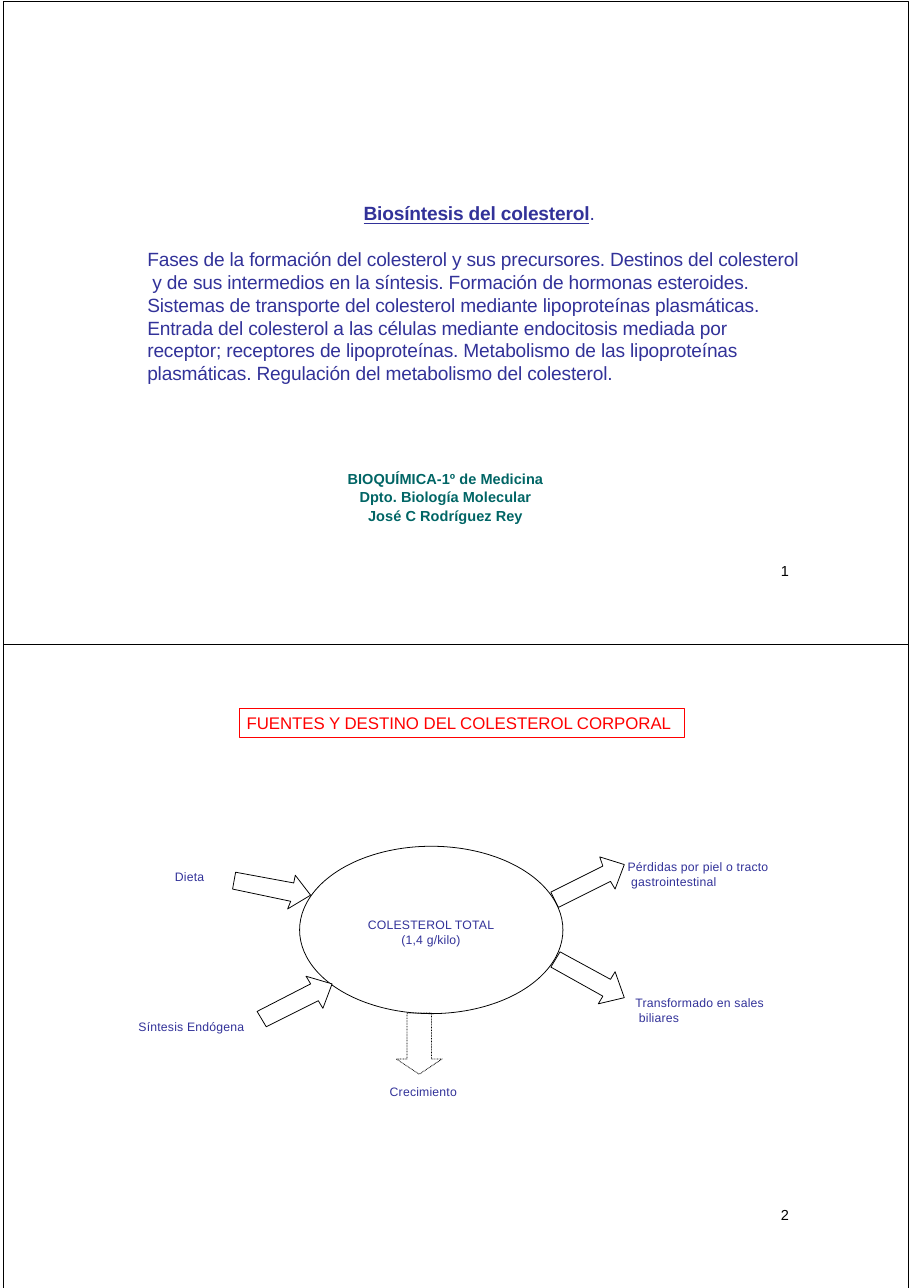
from pptx import Presentation
from pptx.dml.color import RGBColor
from pptx.enum.dml import MSO_LINE
from pptx.enum.shapes import MSO_SHAPE
from pptx.enum.text import MSO_ANCHOR, PP_ALIGN
from pptx.util import Pt
from math import hypot

BLACK, WHITE, RED, BLUE, GREEN = "000000", "FFFFFF", "FF0000", "323299", "006565"


def rgb(value):
    return RGBColor.from_string(value)


def style_shape(sp, line, width, fill=None):
    sp.shadow.inherit = False
    if fill:
        sp.fill.solid()
        sp.fill.fore_color.rgb = rgb(fill)
    else:
        sp.fill.background()
    sp.line.color.rgb = rgb(line)
    sp.line.width = Pt(width)


def add_outline(s, kind, box, line=BLACK, width=0.52):
    sp = s.shapes.add_shape(kind, *map(Pt, box))
    style_shape(sp, line, width)
    return sp


def format_run(r, size, color, bold, spacing):
    r.font.name = "Arial"
    r.font.size = Pt(size)
    r.font.bold = bold
    r.font.color.rgb = rgb(color)
    r._r.get_or_add_rPr().set("spc", str(spacing))


def fill_text(sp, lines, size, color, align=PP_ALIGN.LEFT, bold=False,
              spacing=10, leading=None, left=0.5, top=2.5):
    tf = sp.text_frame
    tf.word_wrap = True
    tf.vertical_anchor = MSO_ANCHOR.TOP
    tf.margin_left, tf.margin_top = Pt(left), Pt(top)
    tf.margin_right = tf.margin_bottom = 0
    tf.text = "\n".join(lines)
    for p in tf.paragraphs:
        p.alignment = align
        if leading:
            p.line_spacing = Pt(leading)
        for r in p.runs:
            format_run(r, size, color, bold, spacing)
    return tf


def add_text(s, box, lines, size, color, **options):
    return fill_text(s.shapes.add_textbox(*map(Pt, box)), lines, size, color, **options)


def add_block_arrow(s, tail, tip, shaft=11.6, head=12.6, fill=None):
    length = hypot(tip[0] - tail[0], tip[1] - tail[1])
    ux, uy = (tip[0] - tail[0]) / length, (tip[1] - tail[1]) / length
    neck = length - head
    outline = [(0, -shaft / 2), (neck, -shaft / 2), (neck, -shaft), (length, 0),
               (neck, shaft), (neck, shaft / 2), (0, shaft / 2)]
    points = [(tail[0] + a * ux - b * uy, tail[1] + a * uy + b * ux) for a, b in outline]
    builder = s.shapes.build_freeform(*points[0], scale=Pt(1))
    builder.add_line_segments(points[1:], close=True)
    sp = builder.convert_to_shape()
    style_shape(sp, BLACK, 0.52, fill)
    return sp


def add_syllabus(s):
    tf = add_text(s, (95.8, 131, 434.2, 123), [
        "Biosíntesis del colesterol",
        "Fases de la formación del colesterol y sus precursores. Destinos del colesterol"
        "\v y de sus intermedios en la síntesis. Formación de hormonas esteroides."
        "\vSistemas de transporte del colesterol mediante lipoproteínas plasmáticas."
        "\vEntrada del colesterol a las células mediante endocitosis mediada por"
        "\vreceptor; receptores de lipoproteínas. Metabolismo de las lipoproteínas"
        "\vplasmáticas. Regulación del metabolismo del colesterol.",
    ], 12.5, BLUE, spacing=-10, leading=14.9, top=1)
    title, body = tf.paragraphs
    title.alignment = PP_ALIGN.CENTER
    title.runs[0].font.bold = title.runs[0].font.underline = True
    r = title.add_run()
    r.text = "."
    format_run(r, 12.5, BLUE, False, -10)
    body.space_before = Pt(15)


def add_cholesterol_flow(s):
    heading = add_outline(s, MSO_SHAPE.RECTANGLE, (156.2, 463, 290.9, 18.7), RED)
    tf = fill_text(heading, ["FUENTES Y DESTINO DEL COLESTEROL CORPORAL"], 11, RED,
                   spacing=-5, left=5, top=0)
    tf.vertical_anchor = MSO_ANCHOR.MIDDLE

    add_outline(s, MSO_SHAPE.OVAL, (195.8, 553, 172.1, 109.4))
    add_text(s, (238.3, 596.9, 86.4, 21.6), ["COLESTEROL TOTAL", "(1,4 g/kilo)"],
             8, BLUE, align=PP_ALIGN.CENTER, leading=9.8)

    add_block_arrow(s, (153, 575.3), (203, 585.4))
    for tail, tip in [((171, 666), (216.7, 643)),
                      ((363.2, 626.8), (407.5, 651.6)),
                      ((362.5, 587.9), (408.2, 565.2))]:
        add_block_arrow(s, tail, tip, fill=WHITE)
    growth = add_block_arrow(s, (274, 662.4), (274, 702), shaft=15.3, head=10)
    growth.line.dash_style = MSO_LINE.ROUND_DOT

    for x, y, width, label in [
        (113.8, 565.9, 21.6, "Dieta"),
        (90, 663.8, 71.3, "Síntesis Endógena"),
        (254.2, 706.3, 46.1, "Crecimiento"),
        (409.7, 559.4, 94, "Pérdidas por piel o tracto\v gastrointestinal"),
        (414.7, 648, 87, "Transformado en sales\v biliares"),
    ]:
        height = 21.6 if "\v" in label else 12.2
        add_text(s, (x, y, width, height), [label], 8, BLUE, leading=9.8, top=2)


def main():
    prs = Presentation()
    prs.slide_width, prs.slide_height = Pt(594.72), Pt(841.68)
    s = prs.slides.add_slide(prs.slide_layouts[6])
    for number, top in enumerate((0.7, 421.2), 1):
        add_outline(s, MSO_SHAPE.RECTANGLE, (2.2, top, 591.1, 420.5), width=0.25)
        add_text(s, (509.8, top + 364.3, 7.2, 13.7), [str(number)], 9.5, BLACK)
    add_syllabus(s)
    add_text(s, (225.4, 306, 131, 36.7),
             ["BIOQUÍMICA-1º de Medicina", "Dpto. Biología Molecular", "José C Rodríguez Rey"],
             9.5, GREEN, align=PP_ALIGN.CENTER, bold=True, spacing=5, leading=11.8, top=1)
    add_cholesterol_flow(s)
    prs.save("out.pptx")


if __name__ == "__main__":
    main()
